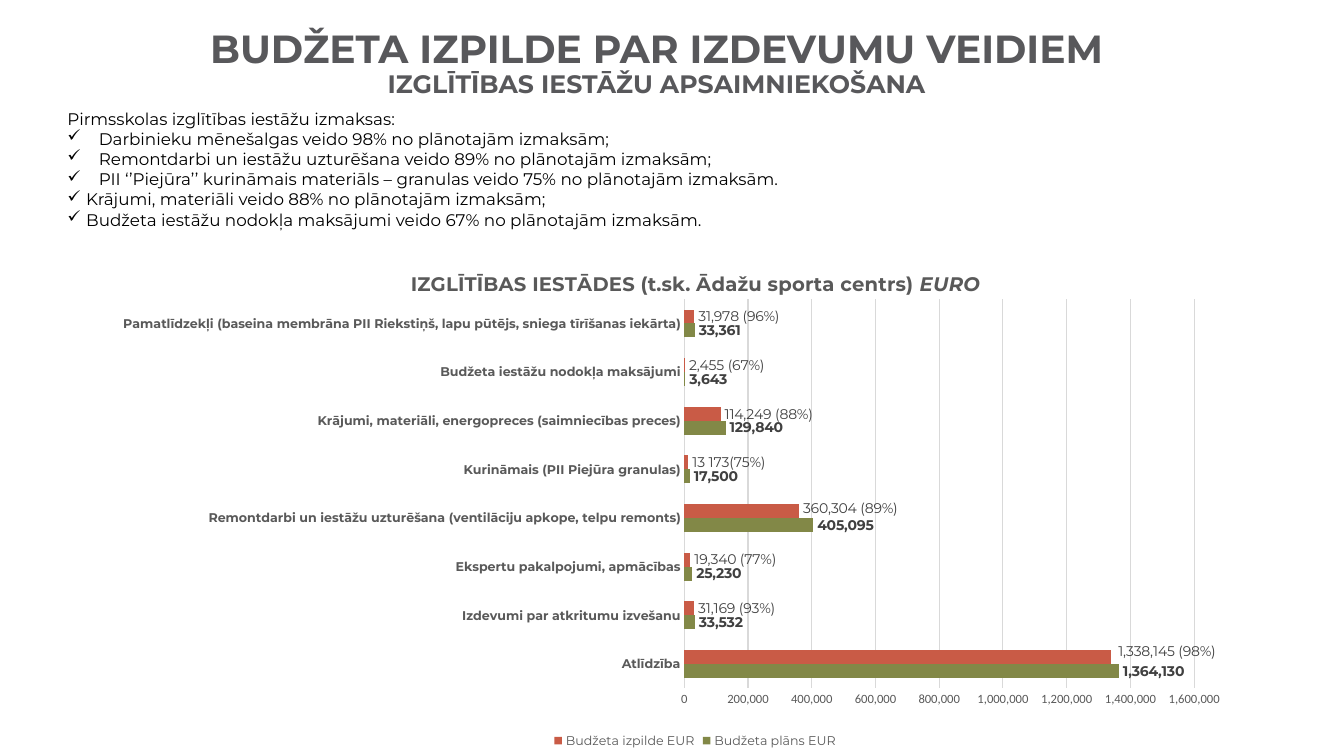
from lxml import etree
from pptx import Presentation
from pptx.chart.data import CategoryChartData
from pptx.dml.color import RGBColor
from pptx.enum.chart import (XL_CHART_TYPE, XL_LABEL_POSITION,
                             XL_LEGEND_POSITION, XL_TICK_MARK)
from pptx.enum.text import MSO_ANCHOR, MSO_AUTO_SIZE, PP_ALIGN
from pptx.oxml.ns import qn
from pptx.util import Pt

BAR_CLUSTERED = XL_CHART_TYPE.BAR_CLUSTERED
OUTSIDE_END = XL_LABEL_POSITION.OUTSIDE_END
LEGEND_BOTTOM = XL_LEGEND_POSITION.BOTTOM
NO_TICK = XL_TICK_MARK.NONE
MIDDLE = MSO_ANCHOR.MIDDLE
NO_FIT, FIT_SHAPE = MSO_AUTO_SIZE.NONE, MSO_AUTO_SIZE.SHAPE_TO_FIT_TEXT
CENTER, JUSTIFY = PP_ALIGN.CENTER, PP_ALIGN.JUSTIFY

COLORS = {"heading": "58585B", "body": "000000", "axis": "595959",
          "label": "404040", "grid": "D9D9D9",
          "plan": "828847", "actual": "C95B46"}
TITLE_ONLY = 5

INTRO = "Pirmsskolas izglītības iestāžu izmaksas:"
# Text and hanging indent in points
COST_POINTS = [
    ("Darbinieku mēnešalgas veido 98% no plānotajām izmaksām;", 22.5),
    ("Remontdarbi un iestāžu uzturēšana veido 89% no plānotajām izmaksām;", 22.5),
    ("PII ‘’Piejūra’’ kurināmais materiāls – granulas veido 75% no plānotajām izmaksām.", 22.5),
    ("Krājumi, materiāli veido 88% no plānotajām izmaksām;", 13.5),
    ("Budžeta iestāžu nodokļa maksājumi veido 67% no plānotajām izmaksām.", 13.5),
]
# Category, planned, actual, label of the actual value
BUDGET = [
    ("Atlīdzība", 1364130, 1338145, "1,338,145 (98%)"),
    ("Izdevumi par atkritumu izvešanu", 33532, 31169, "31,169 (93%)"),
    ("Ekspertu pakalpojumi, apmācības", 25230, 19340, "19,340 (77%)"),
    ("Remontdarbi un iestāžu uzturēšana (ventilāciju apkope, telpu remonts)",
     405095, 360304, "360,304 (89%)"),
    ("Kurināmais (PII Piejūra granulas)", 17500, 13173, "13 173(75%)"),
    ("Krājumi, materiāli, energopreces (saimniecības preces)",
     129840, 114249, "114,249 (88%)"),
    ("Budžeta iestāžu nodokļa maksājumi", 3643, 2455, "2,455 (67%)"),
    ("Pamatlīdzekļi (baseina membrāna PII Riekstiņš, lapu pūtējs, sniega tīrīšanas iekārta)",
     33361, 31978, "31,978 (96%)"),
]
# Row: label shift as a share of the chart's width and height
LABEL_SHIFTS = {0: (0.003, -0.012), 3: (0, -0.006)}


def style_font(font, size, color, bold=False, italic=False, name="Montserrat"):
    font.name, font.size = name, Pt(size)
    font.bold, font.italic = bold, italic
    font.color.rgb = RGBColor.from_string(COLORS[color])


def add_run(paragraph, text, **style):
    run = paragraph.add_run()
    run.text = text
    style_font(run.font, **style)


def hang_bullet(paragraph, indent):
    properties = paragraph._p.get_or_add_pPr()
    properties.set("marL", str(Pt(indent)))
    properties.set("indent", str(-Pt(indent)))
    etree.SubElement(properties, qn("a:buChar")).set("char", "✓")


def set_layout(parent, index, **values):
    """Give a chart part a manual layout, as its child number index."""
    for previous in parent.findall(qn("c:layout")):
        parent.remove(previous)
    layout = etree.Element(qn("c:layout"))
    manual = etree.SubElement(layout, qn("c:manualLayout"))
    for tag, value in values.items():
        etree.SubElement(manual, qn(f"c:{tag}")).set("val", str(value))
    parent.insert(index, layout)


class BudgetSlide:
    def __init__(self, presentation):
        layout = presentation.slide_layouts[TITLE_ONLY]
        self.slide = presentation.slides.add_slide(layout)

    def add_heading(self, main, sub, left, top, width, height):
        heading = self.slide.shapes.title
        heading.left, heading.top = Pt(left), Pt(top)
        heading.width, heading.height = Pt(width), Pt(height)
        frame = heading.text_frame
        frame.word_wrap, frame.auto_size = True, NO_FIT
        frame.vertical_anchor = MIDDLE
        paragraph = frame.paragraphs[0]
        paragraph.alignment, paragraph.line_spacing = CENTER, 0.9
        add_run(paragraph, main, size=28, color="heading", bold=True)
        paragraph.add_line_break()
        add_run(paragraph, sub, size=18, color="heading", bold=True)

    def add_list(self, intro, points, left, top, width, height):
        box = self.slide.shapes.add_textbox(Pt(left), Pt(top), Pt(width), Pt(height))
        frame = box.text_frame
        frame.word_wrap, frame.auto_size = True, FIT_SHAPE
        paragraph = frame.paragraphs[0]
        paragraph.alignment = JUSTIFY
        add_run(paragraph, intro, size=12, color="body")
        for text, indent in points:
            paragraph = frame.add_paragraph()
            paragraph.alignment = JUSTIFY
            hang_bullet(paragraph, indent)
            add_run(paragraph, text, size=12, color="body")

    def add_budget_chart(self, rows, left, top, width, height):
        categories, planned, actual, actual_labels = zip(*rows)
        data = CategoryChartData(number_format="#,##0")
        data.categories = categories
        data.add_series("Budžeta plāns EUR", planned)
        data.add_series("Budžeta izpilde EUR", actual)
        chart = self.slide.shapes.add_chart(
            BAR_CLUSTERED, Pt(left), Pt(top), Pt(width), Pt(height), data).chart
        style_font(chart.font, 10, "body", name="Calibri")
        self.format_title(chart)
        self.format_axes(chart)
        chart.has_legend = True
        chart.legend.position = LEGEND_BOTTOM
        chart.legend.include_in_layout = False
        style_font(chart.legend.font, 9, "axis")

        plot = chart.plots[0]
        plot.gap_width, plot.overlap, plot.vary_by_categories = 150, 0, False
        for series, color in zip(plot.series, ("plan", "actual")):
            self.format_series(series, color)
        self.label_points(plot.series[1], actual_labels)
        set_layout(chart._chartSpace.find(".//" + qn("c:plotArea")), 0,
                   layoutTarget="inner", xMode="edge", yMode="edge",
                   x=0.491, y=0.103, w=0.426, h=0.77)

    def format_title(self, chart):
        chart.has_title = True
        title = chart.chart_title
        paragraph = title.text_frame.paragraphs[0]
        add_run(paragraph, "IZGLĪTĪBAS IESTĀDES (t.sk. Ādažu sporta centrs) ",
                size=14, color="axis", bold=True)
        add_run(paragraph, "EURO", size=14, color="axis", bold=True, italic=True)
        title.include_in_layout = False
        set_layout(title._element, 1, xMode="edge", yMode="edge", x=0.26, y=0.04)

    def format_axes(self, chart):
        for axis in (chart.category_axis, chart.value_axis):
            axis.major_tick_mark = axis.minor_tick_mark = NO_TICK
            axis.format.line.fill.background()
        style_font(chart.category_axis.tick_labels.font, 9, "axis", bold=True)
        amounts = chart.value_axis
        style_font(amounts.tick_labels.font, 9, "axis", name="Calibri")
        amounts.tick_labels.number_format = "#,##0"
        amounts.tick_labels.number_format_is_linked = False
        amounts.minimum_scale, amounts.maximum_scale = 0, 1600000
        amounts.major_unit = 200000
        amounts.has_major_gridlines = True
        grid = amounts.major_gridlines.format.line
        grid.color.rgb = RGBColor.from_string(COLORS["grid"])
        grid.width = Pt(0.75)

    def format_series(self, series, color):
        series.format.fill.solid()
        series.format.fill.fore_color.rgb = RGBColor.from_string(COLORS[color])
        series.invert_if_negative = False
        labels = series.data_labels
        labels.show_value, labels.position = True, OUTSIDE_END
        labels.number_format, labels.number_format_is_linked = "#,##0", False
        style_font(labels.font, 10, "label", bold=True)

    def label_points(self, series, texts):
        for row, text in enumerate(texts):
            label = series.points[row].data_label
            add_run(label.text_frame.paragraphs[0], text, size=10, color="label")
            label.position = OUTSIDE_END
        for element in series._element.iter(qn("c:dLbl")):
            row = int(element.find(qn("c:idx")).get("val"))
            if row in LABEL_SHIFTS:
                x, y = LABEL_SHIFTS[row]
                set_layout(element, 1, x=x, y=y)


def main():
    presentation = Presentation()
    presentation.slide_width, presentation.slide_height = Pt(960), Pt(540)
    page = BudgetSlide(presentation)
    page.add_heading("BUDŽETA IZPILDE PAR IZDEVUMU VEIDIEM",
                     "IZGLĪTĪBAS IESTĀŽU APSAIMNIEKOŠANA", 44, 29, 850, 34)
    page.add_list(INTRO, COST_POINTS, 41, 74, 817, 94)
    page.add_budget_chart(BUDGET, 69, 176.5, 855, 361)
    presentation.save("out.pptx")


if __name__ == "__main__":
    main()
